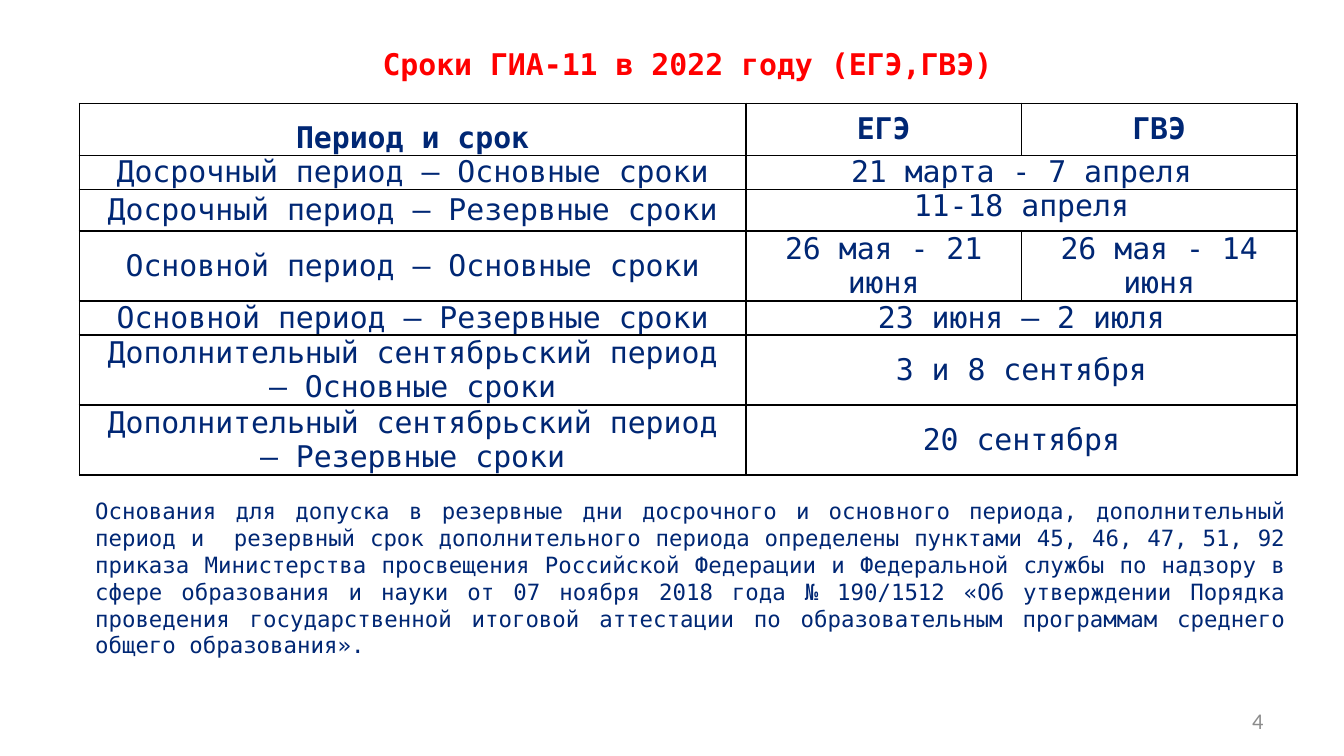
from lxml.etree import SubElement
from pptx import Presentation
from pptx.dml.color import RGBColor
from pptx.enum.text import MSO_ANCHOR as ANCHOR, MSO_AUTO_SIZE as AUTO_SIZE, PP_ALIGN as ALIGN
from pptx.oxml.ns import qn
from pptx.util import Inches, Pt

WIDTH = 10
HEIGHT = WIDTH * 9 / 16
MONO = "DejaVu Sans Mono"
RED = RGBColor(0xFF, 0x00, 0x00)
NAVY = RGBColor(0x00, 0x27, 0x74)
GREY = RGBColor(0x8C, 0x8C, 0x8C)
BLACK = RGBColor(0x00, 0x00, 0x00)
BORDER = Pt(1)

TITLE = "Сроки ГИА-11 в 2022 году (ЕГЭ,ГВЭ)"
HEADER = ("Период и срок", "ЕГЭ", "ГВЭ")
# A row with a single date holds for both exams
SCHEDULE = [
    ("Досрочный период – Основные сроки", "21 марта - 7 апреля"),
    ("Досрочный период – Резервные сроки", "11-18 апреля"),
    ("Основной период – Основные сроки", "26 мая - 21 июня", "26 мая - 14 июня"),
    ("Основной период – Резервные сроки", "23 июня – 2 июля"),
    ("Дополнительный сентябрьский период – Основные сроки", "3 и 8 сентября"),
    ("Дополнительный сентябрьский период – Резервные сроки", "20 сентября"),
]
COL_WIDTHS = (4.96, 2.05, 2.05)
ROW_HEIGHTS = (0.31, 0.15, 0.31, 0.24, 0.24, 0.41, 0.41)
TOP_ANCHORED_ROWS = (1, 2)
NOTE = (
    "Основания для допуска в резервные дни досрочного и основного периода, "
    "дополнительный период и  резервный срок дополнительного периода определены "
    "пунктами 45, 46, 47, 51, 92 приказа Министерства просвещения Российской "
    "Федерации и Федеральной службы по надзору в сфере образования и науки от "
    "07 ноября 2018 года № 190/1512 «Об утверждении Порядка проведения "
    "государственной итоговой аттестации по образовательным программам среднего "
    "общего образования»."
)


def write(tf, text, size, color, align, font=MONO, bold=False):
    tf.text = text
    p = tf.paragraphs[0]
    p.alignment = align
    f = p.runs[0].font
    f.name, f.size, f.bold = font, Pt(size), bold
    f.color.rgb = color


def add_text(slide, box, text, size, color, align, **style):
    sp = slide.shapes.add_textbox(*map(Inches, box))
    tf = sp.text_frame
    tf.word_wrap = True
    write(tf, text, size, color, align, **style)
    return tf


def set_borders(cell):
    """Draw thin black lines round a cell; they must precede its fill."""
    tc_pr = cell._tc.get_or_add_tcPr()
    for i, side in enumerate(("lnL", "lnR", "lnT", "lnB")):
        ln = SubElement(tc_pr, qn(f"a:{side}"), w=str(BORDER))
        fill = SubElement(ln, qn("a:solidFill"))
        SubElement(fill, qn("a:srgbClr"), val=str(BLACK))
        tc_pr.insert(i, ln)


def add_schedule(slide, box):
    rows = [HEADER, *SCHEDULE]
    frame = slide.shapes.add_table(len(rows), len(HEADER), *map(Inches, box))
    table = frame.table
    table.first_row = table.horz_banding = False
    for col, share in zip(table.columns, COL_WIDTHS):
        col.width = Inches(box[2] * share / sum(COL_WIDTHS))
    for row, height in zip(table.rows, ROW_HEIGHTS):
        row.height = Inches(height)

    for r, texts in enumerate(rows):
        for c in range(len(HEADER)):
            cell = table.cell(r, c)
            # Half a border is taken back so that the lines add no row height
            cell.margin_top = cell.margin_bottom = -BORDER // 2
            cell.fill.background()
            set_borders(cell)
            top = c > 0 and r in TOP_ANCHORED_ROWS
            cell.vertical_anchor = ANCHOR.TOP if top else ANCHOR.MIDDLE
            if c < len(texts):
                write(cell.text_frame, texts[c], 16, NAVY, ALIGN.CENTER, bold=r == 0)
        if len(texts) < len(HEADER):
            table.cell(r, 1).merge(table.cell(r, 2))
    table.cell(0, 0).text_frame.paragraphs[0].line_spacing = 1.5


def add_note(slide, box):
    tf = add_text(slide, box, NOTE, 12, NAVY, ALIGN.JUSTIFY)
    tf.auto_size = AUTO_SIZE.SHAPE_TO_FIT_TEXT


def add_page_number(slide, box):
    tf = add_text(slide, box, "4", 12, GREY, ALIGN.RIGHT, font="Calibri")
    tf.vertical_anchor = ANCHOR.MIDDLE


def main():
    prs = Presentation()
    prs.slide_width, prs.slide_height = Inches(WIDTH), Inches(HEIGHT)
    slide = prs.slides.add_slide(prs.slide_layouts[6])
    add_page_number(slide, (7.17, 5.21, 2.33, 0.3))
    add_text(slide, (0.43, 0.29, 9.37, 4.49), TITLE, 16, RED, ALIGN.CENTER, bold=True)
    add_schedule(slide, (0.59, 0.77, 9.06, 2.58))
    add_note(slide, (0.61, 3.65, 9.06, 1.11))
    prs.save("out.pptx")


if __name__ == "__main__":
    main()
